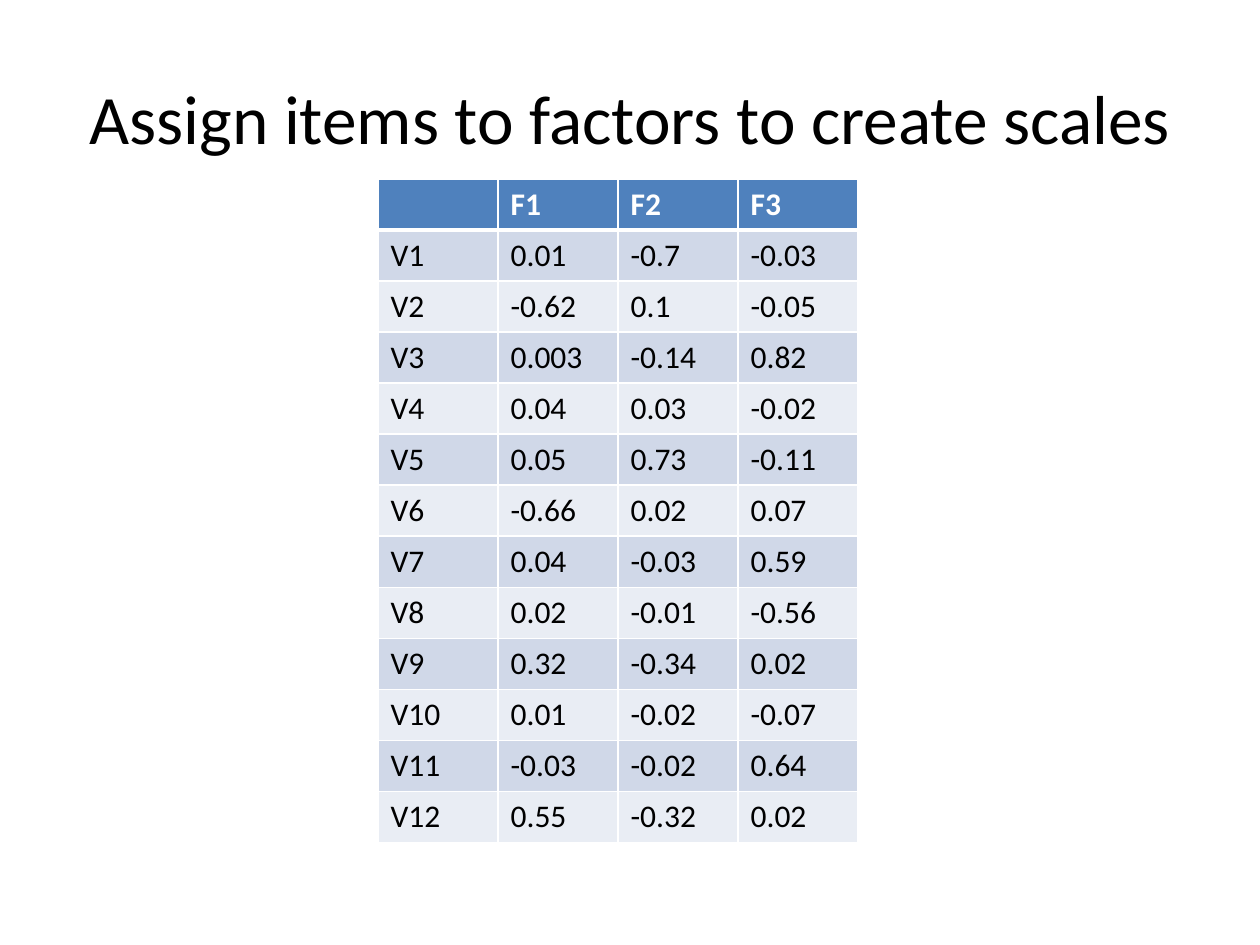
"""Build a slide with a table of factor loadings for twelve items."""
import pptx
import pptx.dml.color
import pptx.enum.text
import pptx.oxml
import pptx.oxml.ns
import pptx.util

Inches = pptx.util.Inches
Pt = pptx.util.Pt
RGBColor = pptx.dml.color.RGBColor

BLACK = RGBColor(0x00, 0x00, 0x00)
WHITE = RGBColor(0xFF, 0xFF, 0xFF)
HEADER_BLUE = RGBColor(0x4F, 0x81, 0xBD)
BAND_DARK = RGBColor(0xD0, 0xD8, 0xE8)
BAND_LIGHT = RGBColor(0xE9, 0xED, 0xF4)

LOADINGS = [
    ("", "F1", "F2", "F3"),
    ("V1", "0.01", "-0.7", "-0.03"),
    ("V2", "-0.62", "0.1", "-0.05"),
    ("V3", "0.003", "-0.14", "0.82"),
    ("V4", "0.04", "0.03", "-0.02"),
    ("V5", "0.05", "0.73", "-0.11"),
    ("V6", "-0.66", "0.02", "0.07"),
    ("V7", "0.04", "-0.03", "0.59"),
    ("V8", "0.02", "-0.01", "-0.56"),
    ("V9", "0.32", "-0.34", "0.02"),
    ("V10", "0.01", "-0.02", "-0.07"),
    ("V11", "-0.03", "-0.02", "0.64"),
    ("V12", "0.55", "-0.32", "0.02"),
]


class SlideBuilder:
    def __init__(self, slide, font="Calibri"):
        self.s = slide
        self.font = font

    def run(self, p, text, size, color, bold=False):
        r = p.add_run()
        r.text = text
        r.font.name = self.font
        r.font.size = Pt(size)
        r.font.bold = bold
        r.font.color.rgb = color

    def title(self, text, left, top, width, height):
        sp = self.s.shapes.add_textbox(left, top, width, height)
        tf = sp.text_frame
        tf.word_wrap = True
        tf.vertical_anchor = pptx.enum.text.MSO_ANCHOR.MIDDLE
        p = tf.paragraphs[0]
        p.alignment = pptx.enum.text.PP_ALIGN.CENTER
        self.run(p, text, 39.6, BLACK)

    def borders(self, cell, widths):
        tc_pr = cell._tc.get_or_add_tcPr()
        for side, width in widths.items():
            tc_pr.append(pptx.oxml.parse_xml(
                f'<a:ln{side} {pptx.oxml.ns.nsdecls("a")} w="{Pt(width)}">'
                f'<a:solidFill><a:srgbClr val="{WHITE}"/></a:solidFill></a:ln{side}>'))

    def cell(self, cell, text, fill, color, bold, widths):
        self.borders(cell, widths)
        cell.fill.solid()
        cell.fill.fore_color.rgb = fill
        p = cell.text_frame.paragraphs[0]
        if text:
            self.run(p, text, 18, color, bold)
        else:
            p.font.size = Pt(18)

    def table(self, rows, left, top, width, height):
        shape = self.s.shapes.add_table(len(rows), len(rows[0]), left, top, width, height)
        for i, row in enumerate(rows):
            header = i == 0
            fill = HEADER_BLUE if header else (BAND_DARK if i % 2 else BAND_LIGHT)
            color = WHITE if header else BLACK
            widths = {"L": 1, "R": 1, "T": 3 if i == 1 else 1, "B": 3 if header else 1}
            for j, text in enumerate(row):
                self.cell(shape.table.cell(i, j), text, fill, color, header, widths)


def main():
    prs = pptx.Presentation()
    prs.slide_width, prs.slide_height = Inches(10), Inches(7.5)
    builder = SlideBuilder(prs.slides.add_slide(prs.slide_layouts[6]))
    builder.title("Assign items to factors to create scales",
                  Inches(0.5), Inches(0.3), Inches(9), Inches(1.25))
    builder.table(LOADINGS, Inches(3), Inches(1.42), Inches(3.81), Inches(5.27))
    prs.save("out.pptx")


if __name__ == "__main__":
    main()
